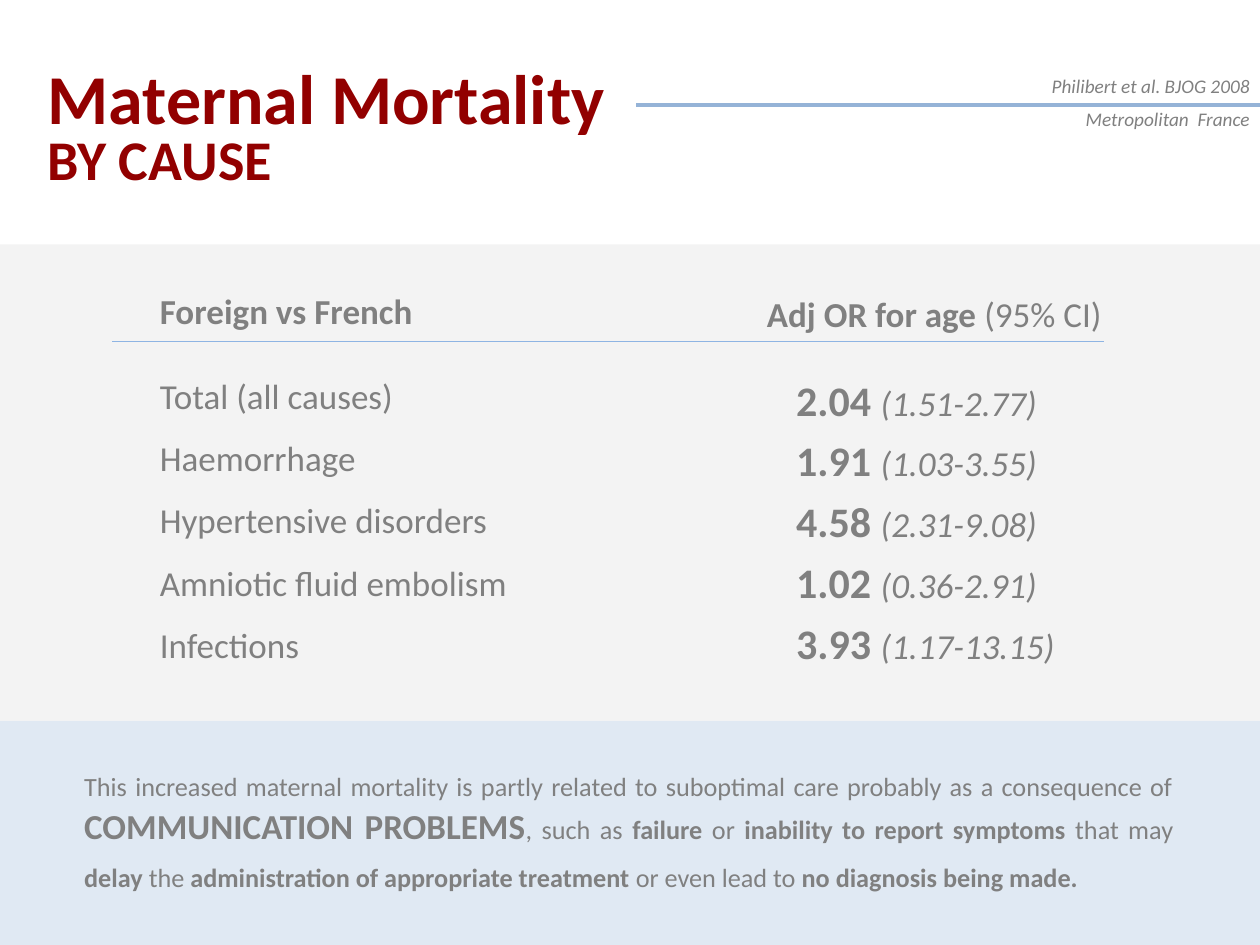
"""Build the slide on maternal mortality by cause, foreign versus French women."""
from lxml import etree
from pptx import Presentation
from pptx import util as u
from pptx.dml.color import RGBColor
from pptx.enum import shapes, text
from pptx.oxml.ns import qn

RED = RGBColor(0x92, 0x00, 0x00)
GREY = RGBColor(0x80, 0x80, 0x80)
PALE_GREY = RGBColor(0xF2, 0xF2, 0xF2)
PALE_BLUE = RGBColor(0xDC, 0xE6, 0xF2)
RULE_BLUE = RGBColor(0x95, 0xB3, 0xD7)
HEADER_BLUE = RGBColor(0x8E, 0xB4, 0xE3)

deck = Presentation()
deck.slide_width, deck.slide_height = u.Inches(10), u.Inches(7.5)
slide = deck.slides.add_slide(deck.slide_layouts[5])


def write(left, top, width, height, runs, size=20, color=GREY, align=text.PP_ALIGN.LEFT,
          anchor=text.MSO_ANCHOR.TOP, wrap=True, spacing=None, box=None):
    """Write runs of (text, style letters b and i, optional size) into a box."""
    area = [u.Inches(n) for n in (left, top, width, height)]
    if box is None:
        box = slide.shapes.add_textbox(*area)
    else:
        box.left, box.top, box.width, box.height = area
    frame = box.text_frame
    frame.auto_size = text.MSO_AUTO_SIZE.NONE
    frame.word_wrap = wrap
    frame.vertical_anchor = anchor
    line = frame.paragraphs[0]
    line.alignment = align
    if spacing:
        line.line_spacing = u.Pt(spacing)
    for words, style, *own_size in runs:
        run = line.add_run()
        run.text = words
        run.font.name = "Calibri"
        run.font.size = u.Pt(own_size[0] if own_size else size)
        run.font.bold = "b" in style
        run.font.italic = "i" in style
        run.font.color.rgb = color


for top, height, color in ((5.72, 1.81, PALE_BLUE), (1.94, 3.78, PALE_GREY)):
    band = slide.shapes.add_shape(shapes.MSO_SHAPE.RECTANGLE, u.Inches(-0.51), u.Inches(top),
                                  u.Inches(11.34), u.Inches(height))
    band.shadow.inherit = False
    band.fill.solid()
    band.fill.fore_color.rgb = color
    band.line.fill.background()
    tint = band.fill._xPr.find(qn("a:solidFill"))[0]
    etree.SubElement(tint, qn("a:alpha")).set("val", "88000")

for start, end, y, color, weight in ((5.05, 10.96, 0.83, RULE_BLUE, 2.25),
                                     (0.89, 8.76, 2.71, HEADER_BLUE, 0.75)):
    rule = slide.shapes.add_connector(shapes.MSO_CONNECTOR.STRAIGHT, u.Inches(start),
                                      u.Inches(y), u.Inches(end), u.Inches(y))
    rule.line.color.rgb = color
    rule.line.width = u.Pt(weight)
    etree.SubElement(rule._element.spPr, qn("a:effectLst"))

write(0.28, 0.21, 5.58, 1.11, [("Maternal Mortality", "b")], size=40, color=RED,
      anchor=text.MSO_ANCHOR.MIDDLE, box=slide.shapes.title)
write(0.28, 0.89, 5.4, 0.73, [("BY CAUSE", "b")], size=32, color=RED,
      anchor=text.MSO_ANCHOR.MIDDLE)

for top, source in ((0.54, "Philibert et al. BJOG 2008"), (0.8, "Metropolitan  France")):
    write(5.85, top, 4.17, 0.29, [(source, "i")], size=11, align=text.PP_ALIGN.RIGHT)

write(1.17, 2.25, 2.22, 0.44, [("Foreign vs French", "b")], wrap=False)
write(5.97, 2.27, 2.89, 0.44, [("Adj OR for age ", "b"), ("(95% CI)", "")],
      align=text.PP_ALIGN.CENTER, wrap=False)

causes = (
    ("Total (all causes)", 2.08, "2.04", "(1.51-2.77)"),
    ("Haemorrhage", 1.77, "1.91", "(1.03-3.55)"),
    ("Hypertensive disorders", 2.83, "4.58", "(2.31-9.08)"),
    ("Amniotic fluid embolism", 2.99, "1.02", "(0.36-2.91)"),
    ("Infections", 1.32, "3.93", "(1.17-13.15)"),
)
for row, (cause, width, odds_ratio, interval) in enumerate(causes):
    write(1.17, 2.92 + 0.495 * row, width, 0.44, [(cause, "")], wrap=False)
    write(6.22, 2.92 + 0.483 * row, 2.66, 0.5,
          [(odds_ratio + " ", "b", 24), (interval, "i")])

conclusion = [
    ("This increased maternal mortality is partly related to suboptimal care probably "
     "as a consequence of ", ""),
    ("COMMUNICATION PROBLEMS", "b", 20),
    (", such as ", ""),
    ("failure ", "b"),
    ("or ", ""),
    ("inability to report symptoms ", "b"),
    ("that may ", ""),
    ("delay", "b"),
    (" the ", ""),
    ("administration of appropriate treatment ", "b"),
    ("or even lead to ", ""),
    ("no diagnosis being made.", "b"),
]
write(0.57, 5.95, 8.84, 1.2, conclusion, size=15, align=text.PP_ALIGN.JUSTIFY, spacing=26)

deck.save("out.pptx")
